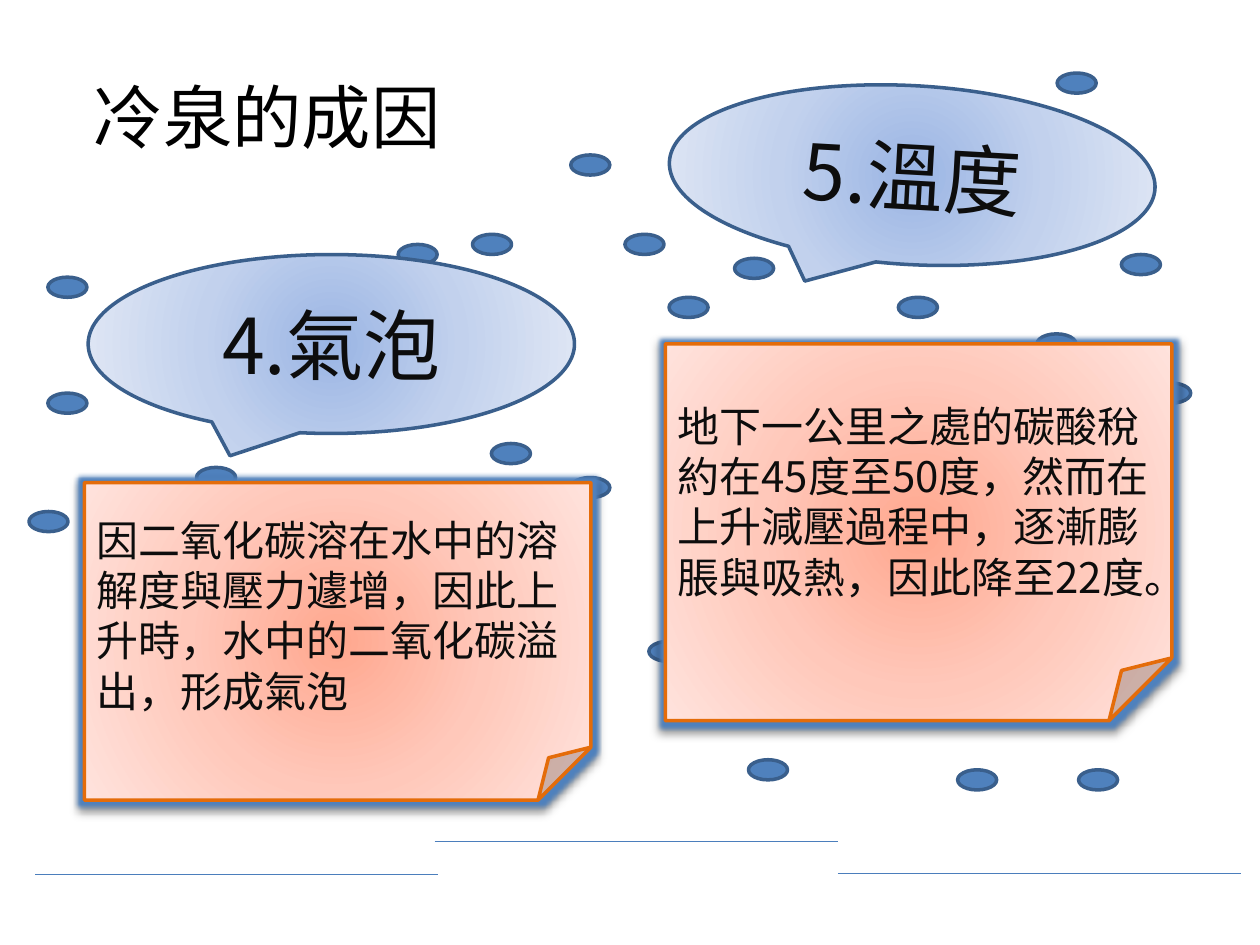
import pptx
import pptx.util
import pptx.dml.color
import pptx.enum.shapes
import pptx.enum.text
import pptx.oxml
import pptx.oxml.ns

Inches = pptx.util.Inches
Pt = pptx.util.Pt
SHAPE = pptx.enum.shapes.MSO_SHAPE
ALIGN = pptx.enum.text.PP_ALIGN
NAMESPACE = pptx.oxml.ns.nsdecls("a")

FONT = "Noto Sans CJK SC"
COLORS = {
    "title": "000000", "text": "0D0D0D",
    "bubble": "4F81BD", "bubble_edge": "3A5F8C",
    "note_edge": "E46C0A", "water": "4B7EBC",
    "glow": "4F81BD", "shadow": "000000",
}
CALLOUT_GRADIENT = ["9AB5E4", "C2D1ED", "E1E8F5"]
NOTE_GRADIENT = ["FFA78E", "FFC8BA", "FFE3DD"]

TITLE = "冷泉的成因"
TITLE_BOX = (0.5, 0.3, 3.24, 1.24)
CALLOUT_SIZE = (3.86, 1.42)
CALLOUTS = [  # left, top, rotation, text
    (5.31, 0.68, 3.2, "5.溫度"),
    (0.7, 2.02, 0, "4.氣泡"),
]
NOTES = [  # left, top, width, height, text
    (0.67, 3.83, 4.02, 2.52,
     "因二氧化碳溶在水中的溶解度與壓力遽增，因此上升時，水中的二氧化碳溢出，形成氣泡"),
    (5.28, 2.73, 4.02, 2.99,
     "地下一公里之處的碳酸稅約在45度至50度，然而在上升減壓過程中，逐漸膨脹與吸熱，因此降至22度。"),
]
WATER_LENGTH = 3.2
WATER_LINES = [(0.28, 6.94), (3.45, 6.68), (6.65, 6.93)]
BUBBLE_SIZE = (0.31, 0.16)
BUBBLES = [
    (7.6, 6.11), (3.9, 3.52), (0.38, 3.12), (0.38, 2.2), (3.16, 1.94),
    (1.56, 3.71), (4.53, 3.79), (0.23, 4.06), (3.75, 1.86), (4.96, 1.86),
    (7.13, 2.36), (5.94, 6.03), (8.9, 2.02), (5.83, 2.05), (8.39, 0.58),
    (8.23, 2.65), (8.56, 6.11), (4.53, 1.23), (5.31, 2.36), (9.14, 3.04),
    (5.15, 5.09),
]


def rgb(name):
    return pptx.dml.color.RGBColor.from_string(COLORS[name])


def add_text(shape, text, size, color, align):
    frame = shape.text_frame
    frame.word_wrap = True
    frame.vertical_anchor = pptx.enum.text.MSO_ANCHOR.MIDDLE
    para = frame.paragraphs[0]
    para.alignment = align
    span = para.add_run()
    span.text = text
    span.font.size = Pt(size)
    span.font.name = FONT
    span.font.color.rgb = rgb(color)
    east_asian = pptx.oxml.parse_xml(f'<a:ea {NAMESPACE} typeface="{FONT}"/>')
    span.font._element.append(east_asian)
    return para


def add_outlined(page, kind, box, edge):
    shape = page.shapes.add_shape(kind, *map(Inches, box))
    shape.shadow.inherit = False
    shape.line.color.rgb = rgb(edge)
    shape.line.width = Pt(2)
    return shape


def fill_radial(shape, colors):
    """Fill from the centre outwards with evenly spaced colours."""
    step = 100000 // (len(colors) - 1)
    stops = "".join(
        f'<a:gs pos="{index * step}"><a:srgbClr val="{color}"/></a:gs>'
        for index, color in enumerate(colors))
    gradient = pptx.oxml.parse_xml(
        f'<a:gradFill {NAMESPACE} rotWithShape="1"><a:gsLst>{stops}</a:gsLst>'
        '<a:path path="circle">'
        '<a:fillToRect l="50000" t="50000" r="50000" b="50000"/>'
        '</a:path></a:gradFill>')
    shape.fill.background()
    properties = shape._element.spPr
    empty = properties.find(pptx.oxml.ns.qn("a:noFill"))
    properties.replace(empty, gradient)


def add_glow_and_shadow(shape):
    effects = shape._element.spPr.find(pptx.oxml.ns.qn("a:effectLst"))
    effects.append(pptx.oxml.parse_xml(
        f'<a:glow {NAMESPACE} rad="{Pt(5)}"><a:srgbClr val="{COLORS["glow"]}"/>'
        '</a:glow>'))
    effects.append(pptx.oxml.parse_xml(
        f'<a:outerShdw {NAMESPACE} blurRad="{Pt(4)}" dist="{Pt(3)}" dir="5400000" '
        f'rotWithShape="0"><a:srgbClr val="{COLORS["shadow"]}">'
        '<a:alpha val="40000"/></a:srgbClr></a:outerShdw>'))


def add_water_line(page, left, top):
    line = page.shapes.add_connector(
        pptx.enum.shapes.MSO_CONNECTOR.STRAIGHT, Inches(left), Inches(top),
        Inches(left + WATER_LENGTH), Inches(top))
    line.line.color.rgb = rgb("water")
    line.line.width = Pt(0.75)
    line._element.spPr.append(pptx.oxml.parse_xml(f"<a:effectLst {NAMESPACE}/>"))


def main():
    deck = pptx.Presentation()
    deck.slide_width, deck.slide_height = Inches(10), Inches(7.5)
    page = deck.slides.add_slide(deck.slide_layouts[6])

    title = page.shapes.add_textbox(*map(Inches, TITLE_BOX))
    add_text(title, TITLE, 39.6, "title", ALIGN.CENTER)

    for left, top in WATER_LINES:
        add_water_line(page, left, top)

    for place in BUBBLES:
        bubble = add_outlined(page, SHAPE.FLOWCHART_CONNECTOR,
                              place + BUBBLE_SIZE, "bubble_edge")
        bubble.fill.solid()
        bubble.fill.fore_color.rgb = rgb("bubble")

    for left, top, rotation, text in CALLOUTS:
        callout = add_outlined(page, SHAPE.OVAL_CALLOUT,
                               (left, top) + CALLOUT_SIZE, "bubble_edge")
        callout.rotation = rotation
        fill_radial(callout, CALLOUT_GRADIENT)
        para = add_text(callout, text, 44, "text", ALIGN.CENTER)
        para.space_before = Pt(8.8)

    for *box, text in NOTES:
        note = add_outlined(page, SHAPE.FOLDED_CORNER, box, "note_edge")
        fill_radial(note, NOTE_GRADIENT)
        add_glow_and_shadow(note)
        add_text(note, text, 24, "text", ALIGN.LEFT)

    deck.save("out.pptx")


if __name__ == "__main__":
    main()
